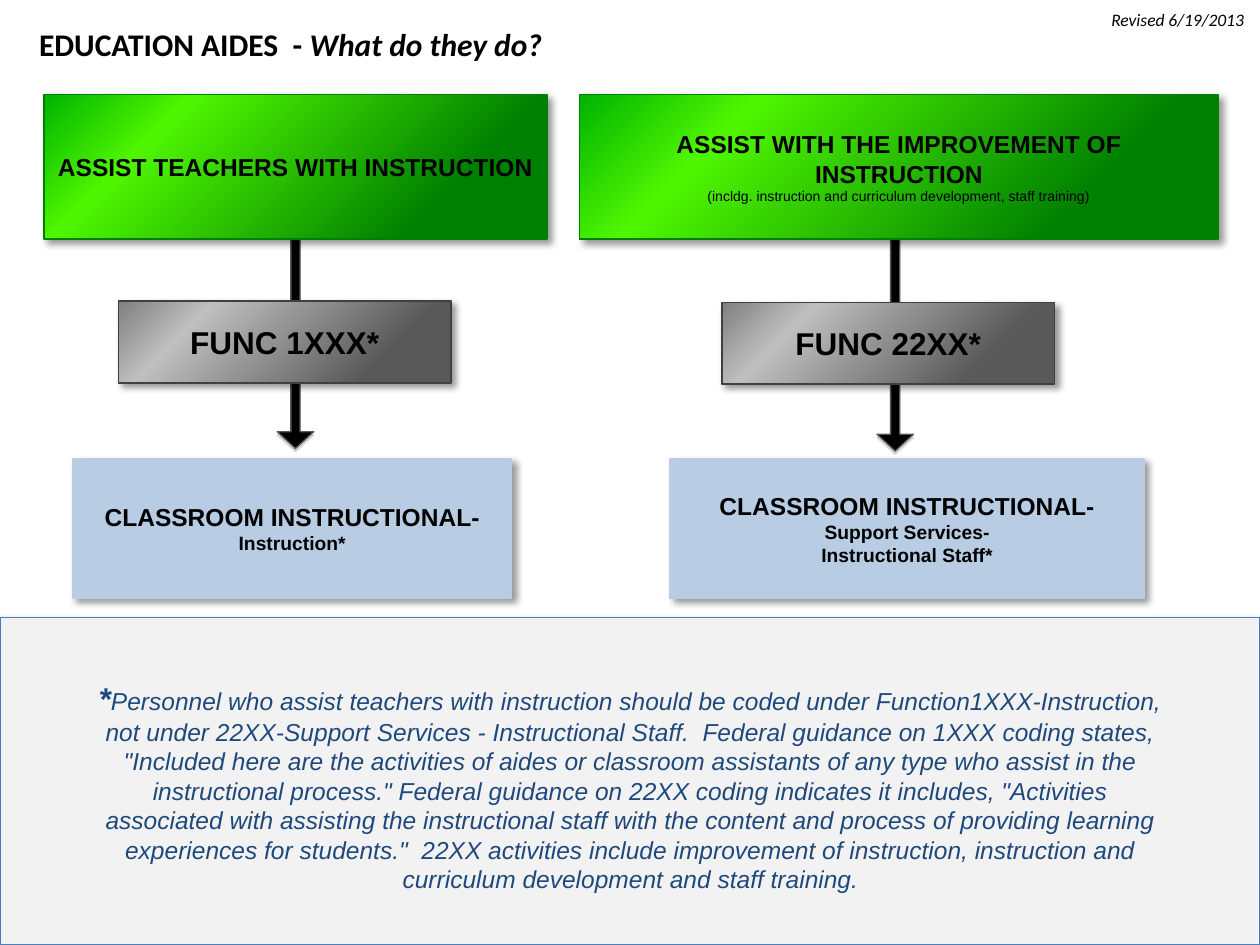
from copy import deepcopy

from lxml.etree import SubElement
from pptx import Presentation
from pptx.dml.color import RGBColor
from pptx.enum.shapes import MSO_SHAPE as Shape
from pptx.enum.text import MSO_ANCHOR as Anchor, PP_ALIGN as Align
from pptx.oxml.ns import qn
from pptx.util import Inches, Pt

COLORS = {
    "black": "000000", "navy": "1F497D", "panel": "F2F2F2", "panel_line": "4B7EBC",
    "green_line": "008000", "gray_line": "404040", "arrow_line": "595959",
    "blue": "B8CCE4", "arrow_shadow": "808080",
}
GREENS = [(0.22, "008000"), (0.77, "4FF600"), (1, "00B300")]
GRAYS = [(0.22, "595959"), (0.77, "BFBFBF"), (1, "808080")]
BOX_SHADOW = ("black", 40, 4, 3, 45)  # colour, opacity %, blur pt, distance pt, angle
ARROW_SHADOW = ("arrow_shadow", 35, 0, 1.8, 90)
PANEL_SHADOW = ("black", 35, 3.1, 1.8, 90)


def write(paragraph, text, size=14, font="Arial", color="black", bold=False,
          italic=False, align=Align.CENTER):
    paragraph.alignment = align
    run = paragraph.add_run()
    run.text = text
    run.font.size = Pt(size)
    run.font.name = font
    run.font.bold = bold
    run.font.italic = italic
    run.font.color.rgb = RGBColor.from_string(COLORS[color])


def add_block(kind, position, fill, line, line_width, shadow, lines=()):
    """Add a shape; fill is a colour name or a list of gradient stops."""
    block = slide.shapes.add_shape(kind, *map(Inches, position))
    if isinstance(fill, str):
        block.fill.solid()
        block.fill.fore_color.rgb = RGBColor.from_string(COLORS[fill])
    else:
        block.fill.gradient()
        stop_list = block.element.spPr.find(".//" + qn("a:gsLst"))
        stop_list.append(deepcopy(stop_list[0]))
        for stop, (offset, hex_color) in zip(block.fill.gradient_stops, fill):
            stop.position = offset
            stop.color.rgb = RGBColor.from_string(hex_color)
        block.fill.gradient_angle = 135
    block.line.color.rgb = RGBColor.from_string(COLORS[line])
    block.line.width = Pt(line_width)

    # Soft outer shadow
    block.shadow.inherit = False
    color, opacity, blur, distance, angle = shadow
    outer = SubElement(block.element.spPr.find(qn("a:effectLst")), qn("a:outerShdw"),
                       blurRad=str(Pt(blur)), dist=str(Pt(distance)),
                       dir=str(angle * 60000), algn="ctr", rotWithShape="0")
    tint = SubElement(outer, qn("a:srgbClr"), val=COLORS[color])
    SubElement(tint, qn("a:alpha"), val=str(opacity * 1000))

    frame = block.text_frame
    frame.word_wrap = True
    frame.vertical_anchor = Anchor.MIDDLE
    for index, (text, size, bold) in enumerate(lines):
        paragraph = frame.add_paragraph() if index else frame.paragraphs[0]
        write(paragraph, text, size=size, bold=bold)
    return block


deck = Presentation()
deck.slide_width, deck.slide_height = Inches(10), Inches(7.5)
slide = deck.slides.add_slide(deck.slide_layouts[5])

# Title
title = slide.shapes.title
title.left, title.top, title.width, title.height = map(Inches, (0.21, 0.15, 8.9, 0.4))
heading = title.text_frame.paragraphs[0]
for text, italic in [("EDUCATION AIDES  - ", False), ("What do they do?", True)]:
    write(heading, text, size=18, font="Calibri", bold=True, italic=italic,
          align=Align.LEFT)

# Two flows: duty, function code, classification; (left, width) for each box
flows = [
    {"arrow": (2.2, 1.22), "duty": (0.35, 3.99), "code": (0.94, 2.39),
     "class": (0.58, 3.48),
     "duty_lines": [("ASSIST TEACHERS WITH INSTRUCTION", 14, True)],
     "code_text": "FUNC 1XXX*",
     "class_lines": ["Instruction*"]},
    {"arrow": (6.96, 1.24), "duty": (4.6, 5.07), "code": (5.73, 2.4),
     "class": (5.32, 3.76),
     "duty_lines": [
         ("ASSIST WITH THE IMPROVEMENT OF INSTRUCTION", 14, True),
         ("(incldg. instruction and curriculum development, staff training)", 8, False)],
     "code_text": "FUNC 22XX*",
     "class_lines": ["Support Services-", "Instructional Staff*"]},
]
for flow in flows:
    arrow = add_block(Shape.DOWN_ARROW, (*flow["arrow"], 0.29, 2.34), "black",
                      "arrow_line", 0.75, ARROW_SHADOW)
    arrow.adjustments[0], arrow.adjustments[1] = 0.25, 0.46

    left, width = flow["duty"]
    add_block(Shape.RECTANGLE, (left, 0.75, width, 1.15), GREENS, "green_line", 1,
              BOX_SHADOW, flow["duty_lines"])

    add_block(Shape.RECTANGLE, (*flow["code"], 2.64, 0.65), GRAYS, "gray_line", 1,
              BOX_SHADOW, [(flow["code_text"], 18, True)])

    left, width = flow["class"]
    add_block(Shape.RECTANGLE, (left, 3.64, width, 1.11), "blue", "blue", 1, BOX_SHADOW,
              [("CLASSROOM INSTRUCTIONAL-", 14, True)]
              + [(text, 11, True) for text in flow["class_lines"]])

# Footnote panel
add_block(Shape.RECTANGLE, (0, 4.9, 10, 2.6), "panel", "panel_line", 0.75, PANEL_SHADOW)
footnote = slide.shapes.add_textbox(*map(Inches, (0.68, 5.34, 8.65, 1.82))).text_frame
footnote.word_wrap = True
note = footnote.paragraphs[0]
write(note, "*", size=18, color="navy", bold=True, italic=True)
write(note, "Personnel who assist teachers with instruction should be coded under "
      "Function1XXX-Instruction, not under 22XX-Support Services - Instructional Staff.  "
      "Federal guidance on 1XXX coding states, \"Included here are the activities of aides "
      "or classroom assistants of any type who assist in the instructional process.\" "
      "Federal guidance on 22XX coding indicates it includes, \"Activities associated with "
      "assisting the instructional staff with the content and process of providing learning "
      "experiences for students.\"  22XX activities include improvement of instruction, "
      "instruction and curriculum development and staff training.",
      color="navy", italic=True)

# Revision date
revision = slide.shapes.add_textbox(*map(Inches, (7.64, 0.02, 2.33, 0.4))).text_frame
revision.word_wrap = True
write(revision.paragraphs[0], "Revised 6/19/2013", size=10, font="Calibri", italic=True,
      align=Align.RIGHT)

deck.save("out.pptx")
